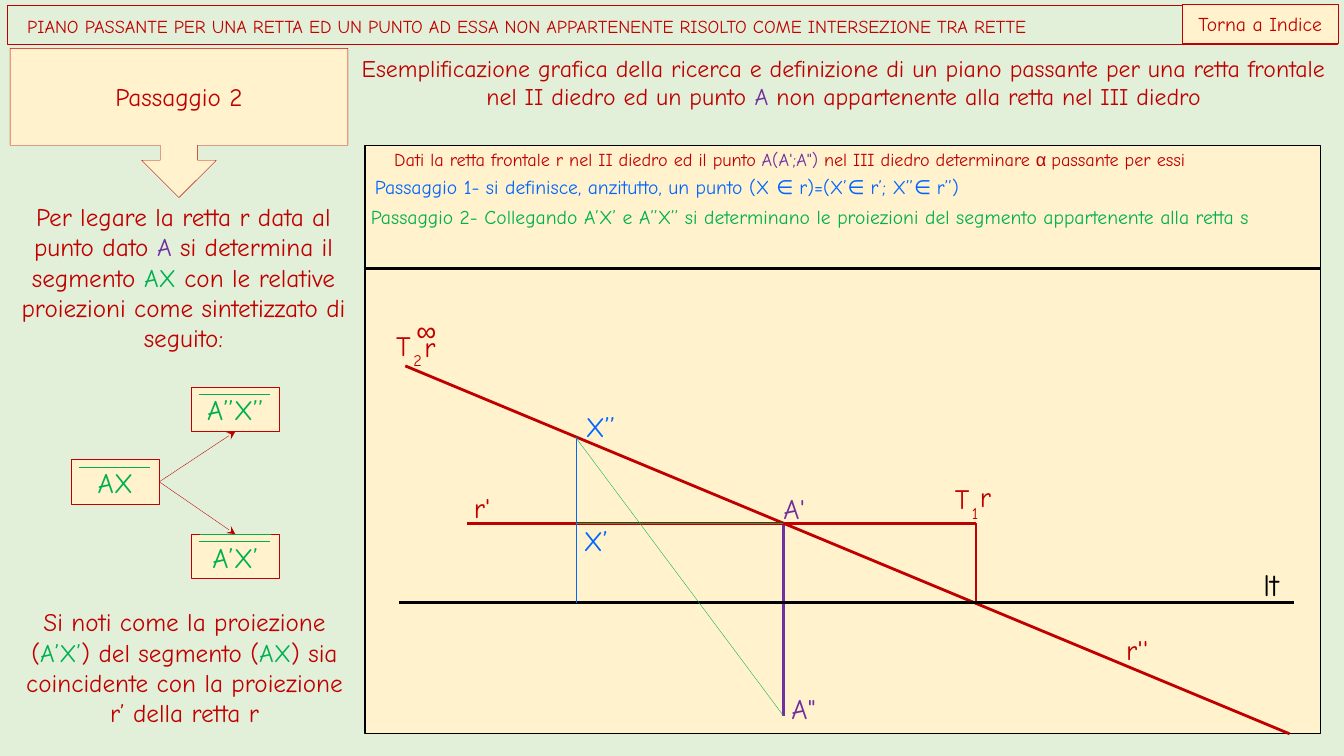
"""Slide on a plane through a frontal line and a point, step 2."""
from lxml.etree import SubElement
from pptx import Presentation
from pptx.dml.color import RGBColor
from pptx.enum.shapes import MSO_CONNECTOR, MSO_SHAPE
from pptx.enum.text import MSO_ANCHOR, MSO_AUTO_SIZE, PP_ALIGN
from pptx.oxml.ns import qn
from pptx.util import Inches, Pt

COLORS = {"red": "C00000", "purple": "7030A0", "green": "00B050", "blue": "0066FF",
          "black": "000000", "cream": "FFF2CC", "mint": "E2F0D9"}
FONT = "Comic Neue"
TOP, BOTTOM, LEFT, RIGHT = 0, 2, 1, 3

HEADING = [
    ("Esemplificazione grafica della ricerca e definizione di un piano passante "
     "per una retta frontale nel II diedro ed un punto ", "red"),
    ("A", "purple"), (" non appartenente alla retta nel III diedro", "red")]
INTRO = [
    ("Per legare la retta r data al punto dato ", "red"), ("A", "purple"),
    (" si determina il segmento ", "red"), ("AX", "green"),
    (" con le relative proiezioni come sintetizzato di seguito:", "red")]
NOTE = [
    ("Si noti come la proiezione (", "red"), ("A’X’", "green"),
    (") del segmento (", "red"), ("AX", "green"),
    (") sia coincidente con la proiezione r’ della retta r", "red")]
SIDE_TEXTS = [(HEADING, (3.45, 0.48, 9.84, 0.67), 17),
              (INTRO, (0.07, 1.95, 3.5, 1.62), 18),
              (NOTE, (0.1, 5.97, 3.46, 1.31), 18)]

GIVEN = [
    ("Dati la retta frontale r nel II diedro ed il punto ", "red"),
    ("A(A';A\") ", "purple"), ("nel III diedro determinare ", "red"),
    ("α ", "red", "Arial"), ("passante per essi", "red")]
STEP_TEXTS = [
    ("Passaggio 1- si definisce, anzitutto, un punto (X ∈ r)=(X’∈ r’; X’’∈ r’’)",
     "blue", (3.62, 1.69, 6.34, 0.34), 14),
    ("Passaggio 2- Collegando A’X’ e A’’X’’ si determinano le proiezioni del "
     "segmento appartenente alla retta s", "green", (3.58, 1.98, 9.56, 0.34), 14),
    ("X’", "blue", (5.69, 5.14, 0.47, 0.31), 20),
    ("X’’", "blue", (5.71, 4.01, 0.51, 0.31), 20)]

PANEL = (3.62, 1.44, 9.48, 5.84)
LABELS = [
    ("lt", "black", (12.53, 5.61, 0.35, 0.51), {"size": 22}),
    ("A'", "purple", (7.77, 4.88, 0.31, 0.34), {}),
    ('A"', "purple", (7.85, 6.86, 0.32, 0.34), {}),
    ("r'", "red", (4.7, 4.87, 0.24, 0.34), {}),
    ("r''", "red", (11.17, 6.28, 0.35, 0.34), {}),
    ("T", "red", (3.93, 3.26, 0.19, 0.34), {}),
    ("2", "red", (4.1, 3.29, 0.11, 0.22), {"baseline": -25}),
    ("r", "red", (4.21, 3.27, 0.13, 0.2), {}),
    ("∞", "red", (4.13, 3.11, 0.2, 0.2), {"font": "Arial"}),
    ("T", "red", (9.47, 4.78, 0.19, 0.34), {}),
    ("1", "red", (9.64, 4.81, 0.08, 0.22), {"baseline": -25}),
    ("r", "red", (9.72, 4.76, 0.13, 0.28), {})]

GROUND, R1, A_X, X_X, T1_X, A2_Y, X2_Y = 5.98, 5.19, 7.77, 5.71, 9.68, 7.1, 4.34
DRAWING = [
    ((3.61, 2.66), (13.09, 2.66), "black", 0),
    ((A_X, A2_Y), (A_X, R1), "purple", 0),
    ((4.63, R1), (T1_X, R1), "red", 0),
    ((T1_X, R1), (T1_X, GROUND), "red", 0),
    ((12.79, 7.28), (4.02, 3.63), "red", 0),
    ((3.96, GROUND), (12.83, GROUND), "black", 0),
    ((X_X, X2_Y), (X_X, GROUND), "blue", 0.25),
    ((A_X, A2_Y), (X_X, X2_Y), "green", 0.25),
    ((X_X, R1), (A_X, R1), "green", 0.25)]

SEGMENTS = {"AX": (0.71, 4.56), "A’’X’’": (1.9, 3.84), "A’X’": (1.9, 5.3)}
SEGMENT_SIZE = (0.87, 0.44)
ARROWS = [("A’’X’’", BOTTOM), ("A’X’", TOP)]


def color(name):
    return RGBColor.from_string(COLORS[name])


def add_box(page, at, fill=None, line=None, width=0.25, kind=MSO_SHAPE.RECTANGLE):
    box = page.shapes.add_shape(kind, *map(Inches, at))
    box.shadow.inherit = False
    if fill:
        box.fill.solid()
        box.fill.fore_color.rgb = color(fill)
    else:
        box.fill.background()
    if line:
        box.line.color.rgb = color(line)
        box.line.width = Pt(width)
    else:
        box.line.fill.background()
    return box


def add_text(page, spans, at, box=None, size=20, font=FONT, align=PP_ALIGN.LEFT,
             anchor=MSO_ANCHOR.TOP, insets=(0.1, 0.05, 0.1, 0.05), wrap=True,
             grow=True, baseline=0):
    box = box or page.shapes.add_textbox(*map(Inches, at))
    frame = box.text_frame
    frame.word_wrap = wrap
    frame.auto_size = MSO_AUTO_SIZE.SHAPE_TO_FIT_TEXT if grow else MSO_AUTO_SIZE.NONE
    frame.vertical_anchor = anchor
    (frame.margin_left, frame.margin_top,
     frame.margin_right, frame.margin_bottom) = map(Inches, insets)
    para = frame.paragraphs[0]
    para.alignment = align
    for text, tint, *other in spans:
        span = para.add_run()
        span.text = text
        span.font.size = Pt(size)
        span.font.name = other[0] if other else font
        span.font.color.rgb = color(tint)
        if baseline:
            span.font._element.set("baseline", str(baseline * 1000))
    return box


def add_line(page, start, end, tint, width):
    line = page.shapes.add_connector(MSO_CONNECTOR.STRAIGHT, *map(Inches, start + end))
    line.line.color.rgb = color(tint)
    line.line.width = Pt(width)
    SubElement(line._element.spPr, qn("a:effectLst"))
    return line


def add_segments(page):
    boxes = {}
    for name, (left, top) in SEGMENTS.items():
        at = (left, top, *SEGMENT_SIZE)
        box = add_box(page, at, "cream", "red")
        boxes[name] = add_text(page, [(name, "green")], at, box,
                               align=PP_ALIGN.CENTER, anchor=MSO_ANCHOR.BOTTOM)
        bar = top + 0.07
        add_line(page, (left + 0.07, bar), (left + 0.78, bar), "green", 0.25)
    add_line(page, (1.98, 5.3), (2.69, 5.3), "green", 0.25)
    for name, side in ARROWS:
        arrow = add_line(page, (1.58, 4.78), (2.33, 4.78), "red", 0.25)
        arrow.begin_connect(boxes["AX"], RIGHT)
        arrow.end_connect(boxes[name], side)
        SubElement(arrow.line._get_or_add_ln(), qn("a:tailEnd"), type="stealth")


def main():
    deck = Presentation()
    deck.slide_width, deck.slide_height = Inches(13.33), Inches(7.5)
    page = deck.slides.add_slide(deck.slide_layouts[6])
    page.background.fill.solid()
    page.background.fill.fore_color.rgb = color("mint")

    at = (0.1, 0.48, 3.35, 1.48)
    callout = add_box(page, at, "cream", "red", kind=MSO_SHAPE.DOWN_ARROW_CALLOUT)
    add_text(page, [("Passaggio 2", "red")], at, callout, size=18, grow=False,
             align=PP_ALIGN.CENTER, anchor=MSO_ANCHOR.MIDDLE)
    for spans, at, size in SIDE_TEXTS:
        add_text(page, spans, at, size=size, align=PP_ALIGN.CENTER)
    add_segments(page)

    add_box(page, PANEL, "cream", "black", 0)
    for text, tint, at, style in LABELS:
        add_text(page, [(text, tint)], at, add_box(page, at, "cream"),
                 insets=(0, 0, 0, 0), wrap=False, **style)
    for stroke in DRAWING:
        add_line(page, *stroke)
    add_text(page, GIVEN, (3.91, 1.47, 8.88, 0.22), size=13, insets=(0, 0, 0, 0))
    for text, tint, at, size in STEP_TEXTS:
        add_text(page, [(text, tint)], at, size=size)

    at = (0.07, 0.05, 13.19, 0.39)
    title = "PIANO PASSANTE PER UNA RETTA ED UN PUNTO AD ESSA NON APPARTENENTE " \
            "RISOLTO COME INTERSEZIONE TRA RETTE"
    add_text(page, [(title, "red")], at, add_box(page, at, line="red"), size=13,
             anchor=MSO_ANCHOR.MIDDLE, insets=(0.2, 0.08, 0.1, 0.05), grow=False)
    at = (11.73, 0.04, 1.54, 0.39)
    add_text(page, [("Torna a Indice", "red")], at, add_box(page, at, "cream", "red"),
             size=14, align=PP_ALIGN.CENTER, anchor=MSO_ANCHOR.MIDDLE)
    deck.save("out.pptx")


if __name__ == "__main__":
    main()
